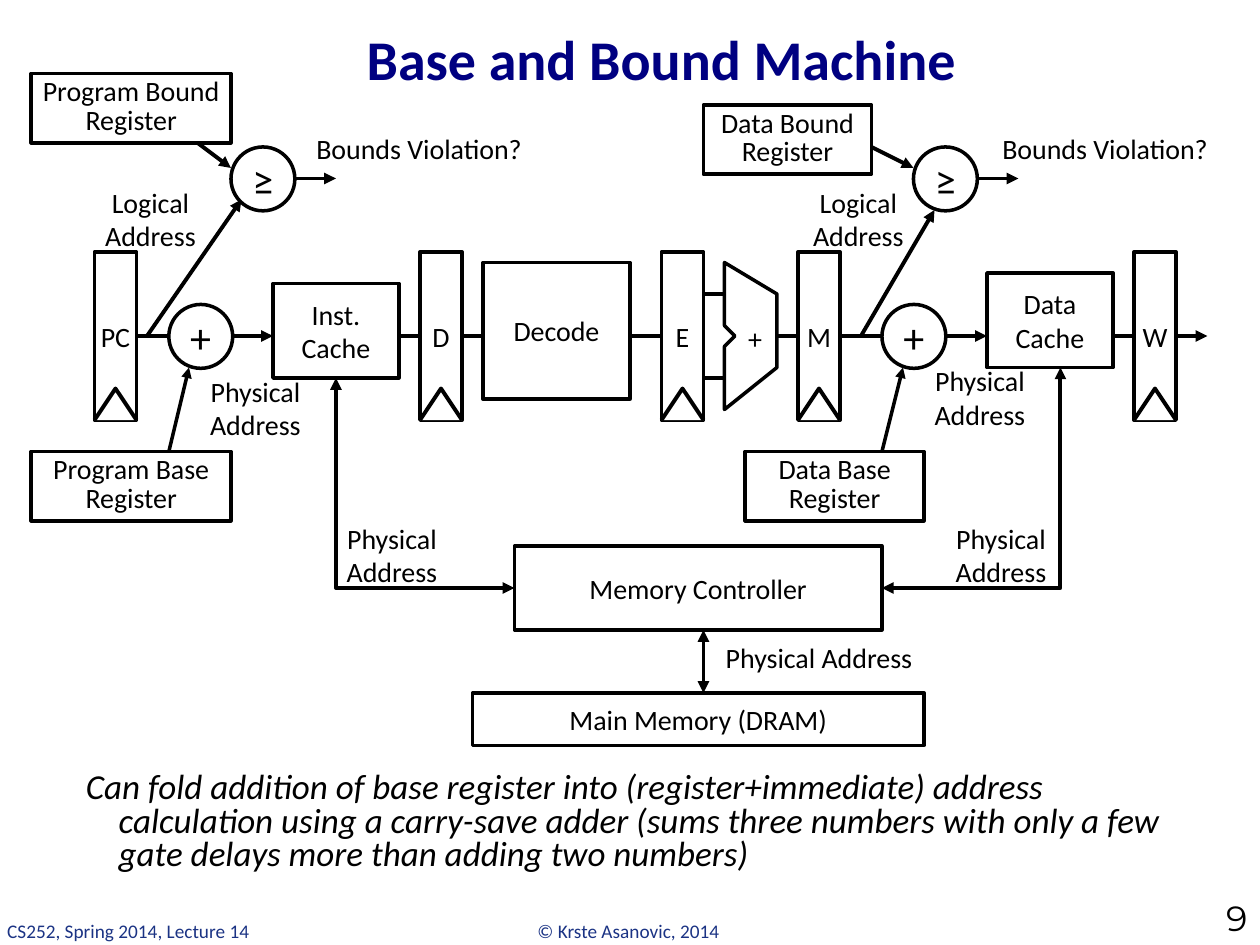
from dataclasses import dataclass
from typing import NamedTuple

from lxml.etree import SubElement
from pptx import Presentation
from pptx.dml.color import RGBColor as RGB
from pptx.enum.shapes import MSO_CONNECTOR as CONN, MSO_SHAPE as SHAPE
from pptx.enum.text import MSO_ANCHOR as ANCHOR, PP_ALIGN as ALIGN
from pptx.oxml.ns import qn
from pptx.util import Pt


@dataclass(frozen=True)
class Theme:
    ink: RGB = RGB(0, 0, 0)
    paper: RGB = RGB(255, 255, 255)
    title: RGB = RGB(0, 0, 0x81)
    footer: RGB = RGB(0x1B, 0x33, 0x84)
    font: str = "Calibri"
    number_font: str = "Montserrat"
    title_size: float = 32
    symbol_size: float = 24
    body_size: float = 20
    label_size: float = 16
    footer_size: float = 11
    thin: float = 2
    thick: float = 2.25


T = Theme()


class Box(NamedTuple):
    text: str
    x: float
    y: float
    w: float
    h: float


class Wire(NamedTuple):
    x1: float
    y1: float
    x2: float
    y2: float
    tail: bool = True
    head: bool = False
    width: float = T.thick


class Register(NamedTuple):
    name: str
    x: float


BUS_Y = 192
REG_Y, REG_W, REG_H, NOTCH_H = 144, 24, 96, 18
CIRCLE = 36.5
LABEL_W, LABEL_H = 88, 46

BUS = [
    Wire(444, BUS_Y, 564, BUS_Y),
    Wire(636, BUS_Y, 690, BUS_Y),
    Wire(228, BUS_Y, 378, BUS_Y, tail=False),
    Wire(78, BUS_Y, 156, BUS_Y),
    Wire(402, BUS_Y - 24, 414, BUS_Y - 24, tail=False),
    Wire(402, BUS_Y + 24, 414, BUS_Y + 24, tail=False),
    Wire(402, 360, 402, 396, head=True),
]
REGISTERS = [Register("PC", 54), Register("D", 240), Register("E", 378),
             Register("M", 456), Register("W", 648)]
UNITS = [
    Box("Inst. Cache", 156, 162, 72, 54),
    Box("Decode", 276, 150, 84, 78),
    Box("Data Cache", 564, 156, 72, 54),
    Box("Main Memory (DRAM)", 270, 396, 258, 30),
    Box("Memory Controller", 294, 312, 210, 48),
]
ALU = [(414, 150), (414, 186), (420, 192), (414, 198), (414, 234),
       (444, 210), (444, 168)]
MEMORY_PATHS = [
    [(606, 210), (606, 336), (504, 336)],
    [(192, 216), (192, 336), (294, 336)],
]
CHECK_WIRES = [
    Wire(504, 258, 516, 210, width=T.thin),
    Wire(492, BUS_Y, 534, 120),
    Wire(498, 84, 522, 96),
    Wire(558, 102, 582, 102),
    Wire(96.5, 258, 108, 210, width=T.thin),
    Wire(84, BUS_Y, 138, 114),
    Wire(108, 78, 132, 96),
    Wire(168, 102, 192, 102),
]
CIRCLES = [
    Box(text, x, y, CIRCLE, CIRCLE)
    for text, x, y in [("+", 504, 174), ("+", 96.5, 174),
                       ("≥", 132, 84), ("≥", 522, 84)]
]
BOUND_REGISTERS = [
    Box("Data Bound Register", 402, 60, 96, 39.5),
    Box("Data Base Register", 426, 258, 102, 39.5),
    Box("Program Base Register", 18, 258, 114, 39.5),
    Box("Program Bound Register", 18, 42, 114, 39.5),
]
LABELS = [
    Box(text, x, y, LABEL_W, LABEL_H)
    for text, x, y in [
        ("Physical Address", 516, 204), ("Physical Address", 528, 294),
        ("Physical Address", 180, 294), ("Physical Address", 102, 210),
        ("Logical Address", 446.5, 102), ("Logical Address", 42, 102)]
] + [
    Box("Physical Address", 372, 362, 192, 27),
    Box("Bounds Violation?", 565, 72, 133, 25),
    Box("Bounds Violation?", 173, 72, 133, 25),
    Box("+", 420.5, 180, 22, 26.5),
]


def put_text(sp, text: str, size: float = T.label_size, color: RGB = T.ink,
             font: str = T.font, align=ALIGN.CENTER, anchor=ANCHOR.MIDDLE,
             wrap: bool = True):
    tf = sp.text_frame
    tf.word_wrap, tf.vertical_anchor = wrap, anchor
    p = tf.paragraphs[0]
    p.text, p.alignment = text, align
    p.font.size, p.font.name, p.font.color.rgb = Pt(size), font, color
    return p


def text_box(s, box: Box, **style):
    sp = s.shapes.add_textbox(*map(Pt, box[1:]))
    return put_text(sp, box.text, **style)


def outline(sp, width: float, filled: bool = True) -> None:
    sp.shadow.inherit = False
    if filled:
        sp.fill.solid()
        sp.fill.fore_color.rgb = T.paper
    else:
        sp.fill.background()
    sp.line.color.rgb, sp.line.width = T.ink, Pt(width)


def block(s, box: Box, width: float = T.thin, kind=SHAPE.RECTANGLE, **style):
    sp = s.shapes.add_shape(kind, *map(Pt, box[1:]))
    outline(sp, width)
    put_text(sp, box.text, **style)
    return sp


def arrowheads(sp, head: bool, tail: bool) -> None:
    ln = sp.line._get_or_add_ln()
    for tag, shown in (("a:headEnd", head), ("a:tailEnd", tail)):
        if shown:
            SubElement(ln, qn(tag), type="triangle")


def wire(s, w: Wire) -> None:
    c = s.shapes.add_connector(CONN.STRAIGHT, *map(Pt, w[:4]))
    c.line.color.rgb, c.line.width = T.ink, Pt(w.width)
    arrowheads(c, w.head, w.tail)
    SubElement(c._element.spPr, qn("a:effectLst"))


def polygon(s, points: list, width: float, close: bool = False,
            filled: bool = True):
    pts = [(Pt(x), Pt(y)) for x, y in points]
    fb = s.shapes.build_freeform(*pts[0])
    fb.add_line_segments(pts[1:], close=close)
    sp = fb.convert_to_shape()
    outline(sp, width, filled)
    return sp


def pipeline_register(s, reg: Register) -> None:
    block(s, Box(reg.name, reg.x, REG_Y, REG_W, REG_H), T.thick, wrap=False)
    bottom = REG_Y + REG_H
    polygon(s, [(reg.x, bottom), (reg.x + REG_W / 2, bottom - NOTCH_H),
                (reg.x + REG_W, bottom)], T.thick)


def bound_register(s, box: Box) -> None:
    sp = block(s, box, T.thick, anchor=ANCHOR.TOP)
    tf = sp.text_frame
    tf.margin_left = tf.margin_right = Pt(6)
    tf.margin_top = tf.margin_bottom = Pt(3)
    tf.paragraphs[0].line_spacing = 0.85


def slide_text(s) -> None:
    for box in (Box("© Krste Asanovic, 2014", 300, 522, 120, 21),
                Box("CS252, Spring 2014, Lecture 14", -3, 522, 154, 21)):
        text_box(s, box, size=T.footer_size, color=T.footer,
                 align=ALIGN.LEFT, anchor=ANCHOR.TOP, wrap=False)
    p = text_box(s, Box("Base and Bound Machine", 96, 6, 564, 54),
                 size=T.title_size, color=T.title)
    p.font.bold = True
    text_box(s, Box("9", 654, 521, 66, 19), size=T.body_size,
             font=T.number_font, align=ALIGN.RIGHT, anchor=ANCHOR.BOTTOM)
    p = text_box(s, Box(
        "Can fold addition of base register into (register+immediate) address "
        "calculation using a carry-save adder (sums three numbers with only "
        "a few gate delays more than adding two numbers)", 42, 438, 636, 66),
        size=T.body_size, align=ALIGN.LEFT, anchor=ANCHOR.TOP)
    p.font.italic, p.line_spacing = True, 0.8
    pPr = p._p.get_or_add_pPr()
    pPr.set("marL", str(Pt(18.75)))
    pPr.set("indent", str(-Pt(18.75)))


def main() -> None:
    prs = Presentation()
    prs.slide_width, prs.slide_height = Pt(720), Pt(540)
    s = prs.slides.add_slide(prs.slide_layouts[6])
    slide_text(s)
    for w in BUS + CHECK_WIRES:
        wire(s, w)
    for reg in REGISTERS:
        pipeline_register(s, reg)
    for box in UNITS:
        block(s, box)
    polygon(s, ALU, T.thin, close=True)
    for points in MEMORY_PATHS:
        arrowheads(polygon(s, points, T.thick, filled=False), True, True)
    for box in BOUND_REGISTERS:
        bound_register(s, box)
    for box in CIRCLES:
        block(s, box, kind=SHAPE.OVAL, size=T.symbol_size, wrap=False)
    for box in LABELS:
        text_box(s, box)
    prs.save("out.pptx")


if __name__ == "__main__":
    main()
